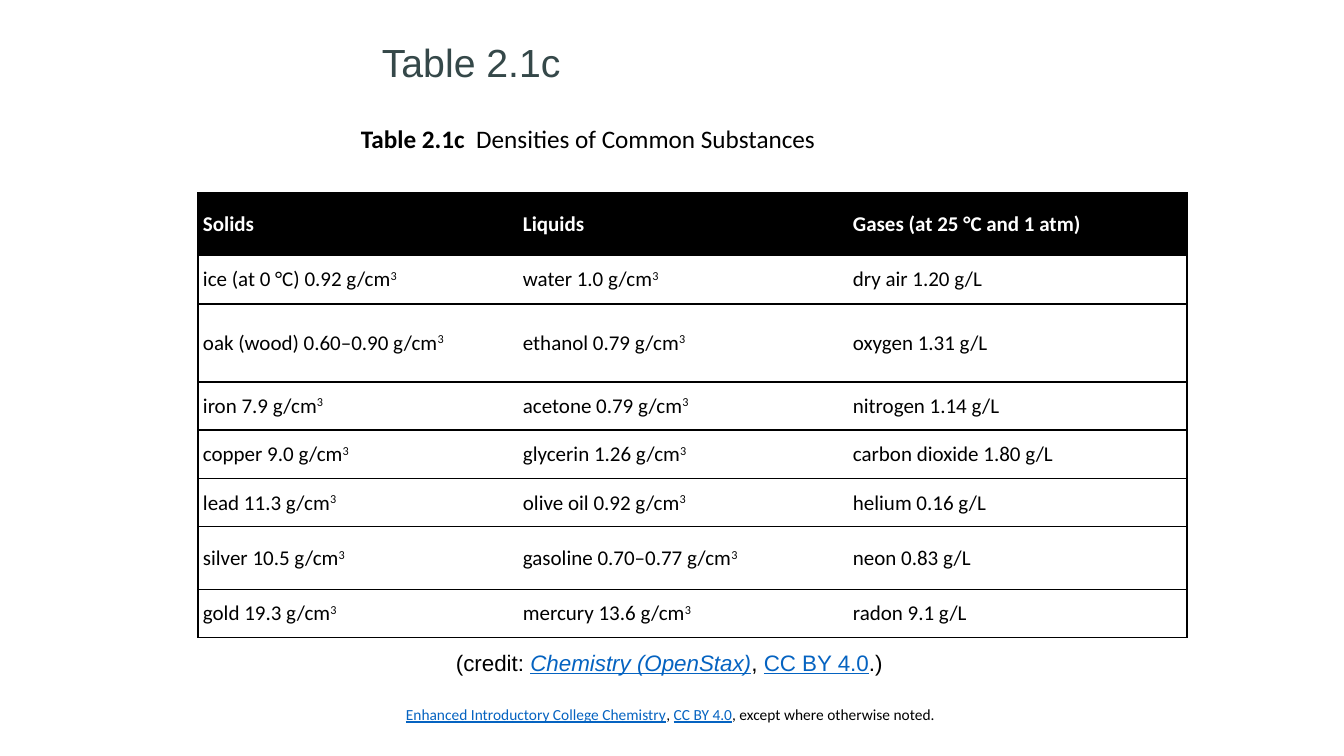
from lxml import etree
from pptx import Presentation
from pptx.dml.color import RGBColor
from pptx.enum.text import MSO_ANCHOR
from pptx.oxml.ns import qn
from pptx.util import Emu, Pt

TOP, MIDDLE, BOTTOM = MSO_ANCHOR.TOP, MSO_ANCHOR.MIDDLE, MSO_ANCHOR.BOTTOM
EMU_PER_PX = 914400 / 100.8
COLORS = {"title": "354849", "text": "000000", "link": "0563C1",
          "header": "000000", "header_text": "FFFFFF", "body": "FFFFFF", "border": "000000"}

COLUMN_WIDTHS = [320, 330, 339]
ROW_HEIGHTS = [62, 49, 78, 48, 49, 48, 63, 48]
HEADERS = ["Solids", "Liquids", "Gases (at 25 °C and 1 atm)"]
DENSITIES = [
    ("ice (at 0 °C) 0.92 g/cm3", "water 1.0 g/cm3", "dry air 1.20 g/L"),
    ("oak (wood) 0.60–0.90 g/cm3", "ethanol 0.79 g/cm3", "oxygen 1.31 g/L"),
    ("iron 7.9 g/cm3", "acetone 0.79 g/cm3", "nitrogen 1.14 g/L"),
    ("copper 9.0 g/cm3", "glycerin 1.26 g/cm3", "carbon dioxide 1.80 g/L"),
    ("lead 11.3 g/cm3", "olive oil 0.92 g/cm3", "helium 0.16 g/L"),
    ("silver 10.5 g/cm3", "gasoline 0.70–0.77 g/cm3", "neon 0.83 g/L"),
    ("gold 19.3 g/cm3", "mercury 13.6 g/cm3", "radon 9.1 g/L"),
]


def px(length):
    return Emu(round(length * EMU_PER_PX))


def add_run(paragraph, text, size, font_name, color="text", bold=False, italic=False,
            superscript=False):
    run = paragraph.add_run()
    run.text = text
    font = run.font
    font.size, font.name = Pt(size), font_name
    font.bold, font.italic = bold, italic
    font.underline = color == "link"
    font.color.rgb = RGBColor.from_string(COLORS[color])
    if superscript:
        run._r.get_or_add_rPr().set("baseline", "30000")


def add_text_line(slide, box, anchor=TOP, wrap=True):
    """Add a text box and return its only paragraph."""
    frame = slide.shapes.add_textbox(*map(px, box)).text_frame
    frame.word_wrap = wrap
    frame.vertical_anchor = anchor
    return frame.paragraphs[0]


def add_headings(slide, title_box, caption_box):
    title = add_text_line(slide, title_box, BOTTOM)
    title.line_spacing = 0.9
    add_run(title, "Table 2.1c", 28, "Arial", "title")
    caption = add_text_line(slide, caption_box)
    add_run(caption, "Table 2.1c ", 18, "Calibri", bold=True)
    add_run(caption, " Densities of Common Substances", 18, "Calibri")


def set_borders(cell, visible_sides):
    properties = cell._tc.get_or_add_tcPr()
    for side in "LRTB":
        line = etree.SubElement(properties, qn(f"a:ln{side}"), w=str(Pt(1)))
        if side in visible_sides:
            fill = etree.SubElement(line, qn("a:solidFill"))
            etree.SubElement(fill, qn("a:srgbClr"), val=COLORS["border"])
        else:
            etree.SubElement(line, qn("a:noFill"))


def fill_cell(cell, text, is_header):
    cell.fill.solid()
    cell.fill.fore_color.rgb = RGBColor.from_string(COLORS["header" if is_header else "body"])
    cell.vertical_anchor = MIDDLE
    cell.margin_left = cell.margin_right = px(5)
    cell.margin_top = cell.margin_bottom = px(2)
    paragraph = cell.text_frame.paragraphs[0]
    color = "header_text" if is_header else "text"
    cubic = text.endswith("cm3")
    add_run(paragraph, text[:-1] if cubic else text, 15, "Calibri", color, bold=is_header)
    if cubic:
        add_run(paragraph, "3", 15, "Calibri", color, superscript=True)


def add_density_table(slide, left, top):
    rows = [HEADERS, *DENSITIES]
    box = (left, top, sum(COLUMN_WIDTHS), sum(ROW_HEIGHTS))
    table = slide.shapes.add_table(len(rows), len(HEADERS), *map(px, box)).table
    table.first_row = table.horz_banding = False
    for column, width in zip(table.columns, COLUMN_WIDTHS):
        column.width = px(width)
    for row, height in zip(table.rows, ROW_HEIGHTS):
        row.height = px(height)
    for row_index, texts in enumerate(rows):
        for column_index, text in enumerate(texts):
            cell = table.cell(row_index, column_index)
            set_borders(cell, ("LTB", "TB", "RTB")[column_index])
            fill_cell(cell, text, row_index == 0)


def add_credits(slide, credit_box, footer_box):
    credit = add_text_line(slide, credit_box, wrap=False)
    add_run(credit, "(credit: ", 16, "Arial")
    add_run(credit, "Chemistry (OpenStax)", 16, "Arial", "link", italic=True)
    add_run(credit, ", ", 16, "Arial")
    add_run(credit, "CC BY 4.0", 16, "Arial", "link")
    add_run(credit, ".)", 16, "Arial")
    footer = add_text_line(slide, footer_box)
    add_run(footer, "Enhanced Introductory College Chemistry", 11, "Calibri", "link")
    add_run(footer, ", ", 11, "Calibri")
    add_run(footer, "CC BY 4.0", 11, "Calibri", "link")
    add_run(footer, ", except where otherwise noted.", 11, "Calibri")


def main():
    presentation = Presentation()
    presentation.slide_width, presentation.slide_height = px(1344), px(756)
    slide = presentation.slides.add_slide(presentation.slide_layouts[6])
    add_headings(slide, (372, 20, 433, 71), (351, 118, 672, 40))
    add_density_table(slide, 198, 193)
    add_credits(slide, (446, 644, 453, 37), (396, 700, 713, 40))
    presentation.save("out.pptx")


if __name__ == "__main__":
    main()
